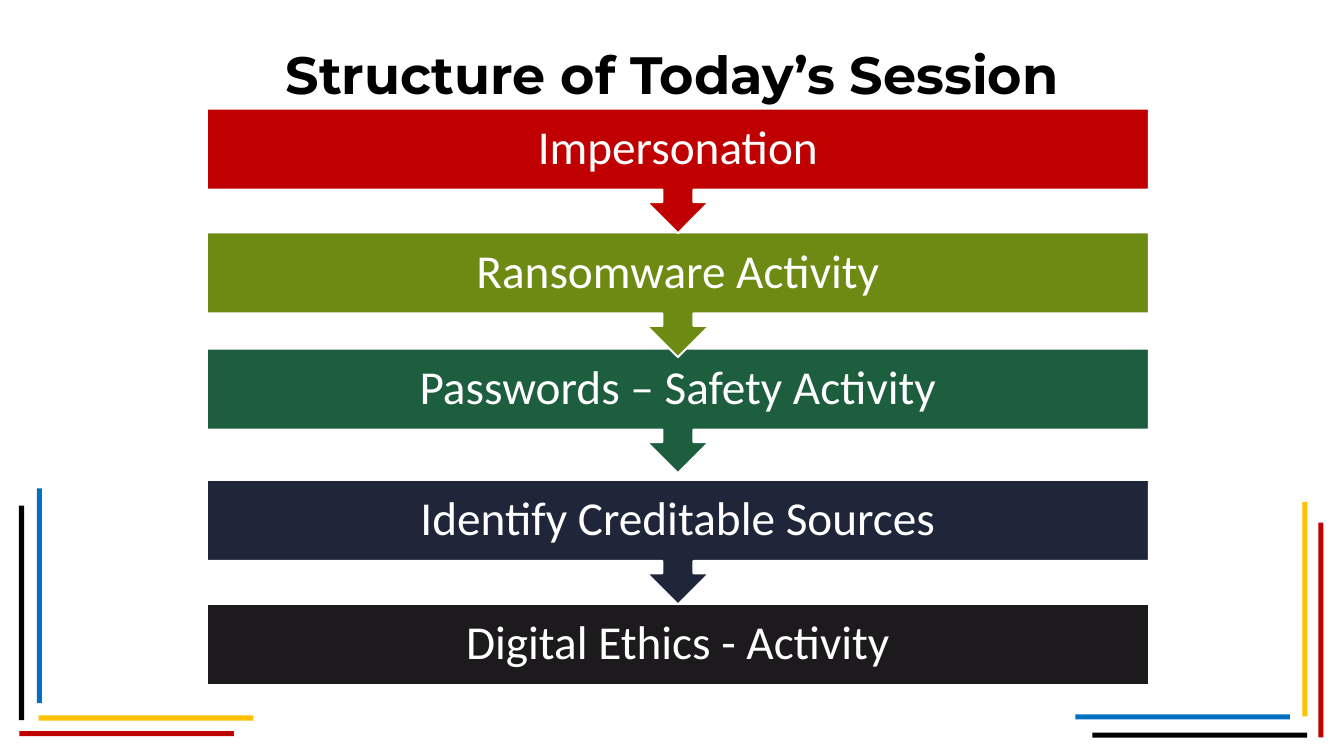
import pptx
import pptx.util
import pptx.dml.color
import pptx.enum.shapes
import pptx.enum.text

Cm = pptx.util.Cm
Pt = pptx.util.Pt
KIND = pptx.enum.shapes.MSO_SHAPE
LONG, THIN = 5.77, 0.14
STEPS = [
    ("Impersonation", "C00000", 0),
    ("Ransomware Activity", "6D8B13", 3.33),
    ("Passwords – Safety Activity", "1D5E3E", 6.45),
    ("Identify Creditable Sources", "20263A", 9.98),
    ("Digital Ethics - Activity", "1D1A1D", 13.31),
]
LEFT = [
    ("000000", 0, 0.46, False),
    ("C00000", 0.01, 6.52, True),
    ("FFC000", 0.53, 6.1, True),
    ("0070C0", 0.48, 0, False),
]
RIGHT = [
    ("000000", 0.46, 6.56, True),
    ("C00000", 6.53, 0.92, False),
    ("FFC000", 6.1, 0.36, False),
    ("0070C0", 0, 6.07, True),
]


def color(code):
    """Turn a hex string into a colour."""
    return pptx.dml.color.RGBColor.from_string(code)


def block(slide, kind, x, y, w, h, fill):
    """Add a flat filled shape without an outline."""
    shape = slide.shapes.add_shape(kind, Cm(x), Cm(y), Cm(w), Cm(h))
    shape.shadow.inherit = False
    shape.fill.solid()
    shape.fill.fore_color.rgb = color(fill)
    shape.line.fill.background()
    return shape


def write(shape, text, face, size, ink, bold=False):
    """Put one centred line of text in a shape."""
    frame = shape.text_frame
    frame.word_wrap = True
    frame.vertical_anchor = pptx.enum.text.MSO_ANCHOR.MIDDLE
    para = frame.paragraphs[0]
    para.text = text
    para.alignment = pptx.enum.text.PP_ALIGN.CENTER
    para.font.name = face
    para.font.size = Pt(size)
    para.font.bold = bold
    para.font.color.rgb = color(ink)
    return para


def corner(slide, x, y, bars):
    """Draw the coloured bars of one bottom corner."""
    for fill, dx, dy, flat in bars:
        w, h = (LONG, THIN) if flat else (THIN, LONG)
        block(slide, KIND.RECTANGLE, x + dx, y + dy, w, h, fill)


def title(slide, x, y, w, h):
    """Write the slide title."""
    box = slide.shapes.add_textbox(Cm(x), Cm(y), Cm(w), Cm(h))
    write(box, "Structure of Today’s Session", "Montserrat", 40, "000000", True)


def flow(slide, x, y, w, h):
    """Stack the steps, each but the last pointing down to the next."""
    last = len(STEPS) - 1
    for i in range(last, -1, -1):
        text, fill, dy = STEPS[i]
        kind, tall = KIND.DOWN_ARROW_CALLOUT, h
        if i == last:
            kind, tall = KIND.RECTANGLE, h * 0.65
        step = block(slide, kind, x, y + dy, w, tall, fill)
        step.line.color.rgb = color("FFFFFF")
        step.line.width = Pt(1.5)
        frame = step.text_frame
        frame.margin_left = frame.margin_right = Cm(0.71)
        frame.margin_top = frame.margin_bottom = Cm(0.71)
        para = write(step, text, "Calibri", 36, "FFFFFF")
        para.line_spacing = 0.9


def main():
    """Build and save the slide."""
    deck = pptx.Presentation()
    deck.slide_width, deck.slide_height = Cm(36.12), Cm(20.32)
    slide = deck.slides.add_slide(deck.slide_layouts[6])
    corner(slide, 0.51, 13.13, LEFT)
    corner(slide, 28.9, 13.13, RIGHT)
    title(slide, 6.38, 0, 23.37, 3.94)
    flow(slide, 5.56, 2.92, 25.32, 3.35)
    deck.save("out.pptx")


if __name__ == "__main__":
    main()
